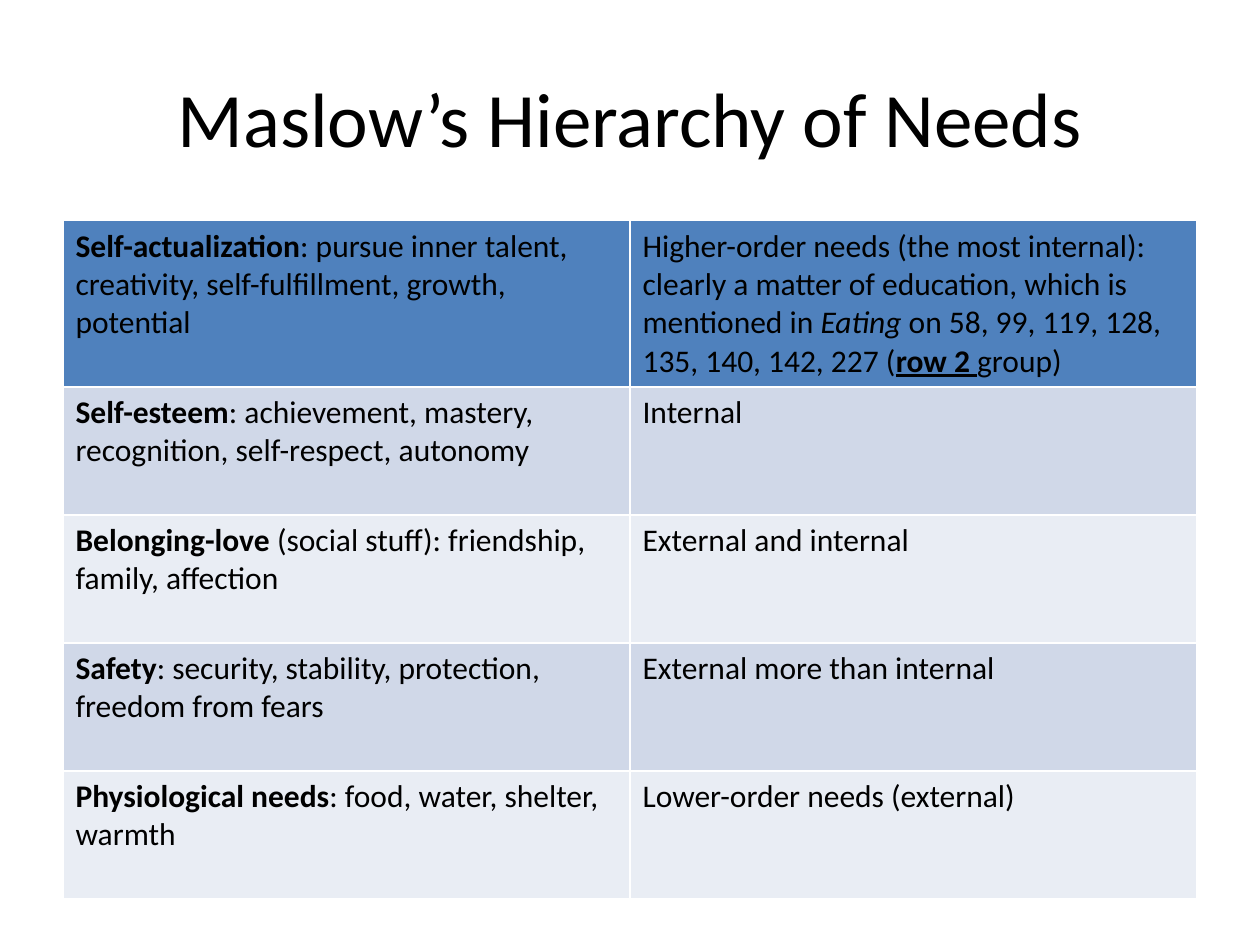
from dataclasses import dataclass

from pptx import Presentation
from pptx.dml.color import RGBColor as Rgb
from pptx.enum.text import MSO_ANCHOR as Anchor, PP_ALIGN as Align
from pptx.util import Cm, Pt


@dataclass(frozen=True)
class Theme:
    font: str = "Calibri"
    title_size: int = 44
    body_size: int = 18
    text: str = "000000"
    header: str = "4F81BD"
    bands: tuple = ("D0D8E8", "E9EDF4")


# Each cell is a list of (text, style letters): b bold, i italic, u underlined
NEEDS = [
    ([("Self-actualization", "b"),
      (": pursue inner talent, creativity, self-fulfillment, growth, potential", "")],
     [("Higher-order needs (the most internal): clearly a matter of education, "
       "which is mentioned in ", ""),
      ("Eating", "i"),
      (" on 58, 99, 119, 128, 135, 140, 142, 227 (", ""),
      ("row 2 ", "bu"),
      ("group)", "")]),
    ([("Self-esteem", "b"),
      (": achievement, mastery, recognition, self-respect, autonomy", "")],
     [("Internal", "")]),
    ([("Belonging-love ", "b"),
      ("(social stuff): friendship, family, affection", "")],
     [("External and internal", "")]),
    ([("Safety", "b"),
      (": security, stability, protection, freedom from fears", "")],
     [("External more than internal", "")]),
    ([("Physiological needs", "b"),
      (": food, water, shelter, warmth", "")],
     [("Lower-order needs (external)", "")]),
]


class SlideBuilder:
    def __init__(self, slide, theme):
        self.slide = slide
        self.theme = theme

    def format_run(self, run, size, style=""):
        font = run.font
        font.name = self.theme.font
        font.size = Pt(size)
        font.color.rgb = Rgb.from_string(self.theme.text)
        font.bold = "b" in style
        font.italic = "i" in style
        font.underline = "u" in style

    def title(self, text, left, top, width, height):
        shape = self.slide.shapes.title
        shape.left, shape.top = Cm(left), Cm(top)
        shape.width, shape.height = Cm(width), Cm(height)
        frame = shape.text_frame
        frame.text = text
        frame.vertical_anchor = Anchor.MIDDLE
        paragraph = frame.paragraphs[0]
        paragraph.alignment = Align.CENTER
        self.format_run(paragraph.runs[0], self.theme.title_size)

    def cell(self, cell, parts, color):
        cell.fill.solid()
        cell.fill.fore_color.rgb = Rgb.from_string(color)
        paragraph = cell.text_frame.paragraphs[0]
        for text, style in parts:
            run = paragraph.add_run()
            run.text = text
            self.format_run(run, self.theme.body_size, style)

    def table(self, rows, left, top, width, header_height, row_height):
        height = header_height + row_height * (len(rows) - 1)
        table = self.slide.shapes.add_table(
            len(rows), len(rows[0]), Cm(left), Cm(top), Cm(width), Cm(height)).table
        for index, row in enumerate(rows):
            table.rows[index].height = Cm(row_height if index else header_height)
            color = self.theme.bands[(index - 1) % 2] if index else self.theme.header
            for column, parts in enumerate(row):
                self.cell(table.cell(index, column), parts, color)


def main():
    presentation = Presentation()
    presentation.slide_width, presentation.slide_height = Cm(25.4), Cm(19.05)
    title_only = presentation.slide_layouts[5]
    builder = SlideBuilder(presentation.slides.add_slide(title_only), Theme())

    # Heading
    builder.title("Maslow’s Hierarchy of Needs", 1.27, 0.76, 22.86, 3.18)

    # Levels of need, from the highest to the lowest
    builder.table(NEEDS, 1.27, 4.45, 22.86, header_height=3.35, row_height=2.58)

    presentation.save("out.pptx")


if __name__ == "__main__":
    main()
